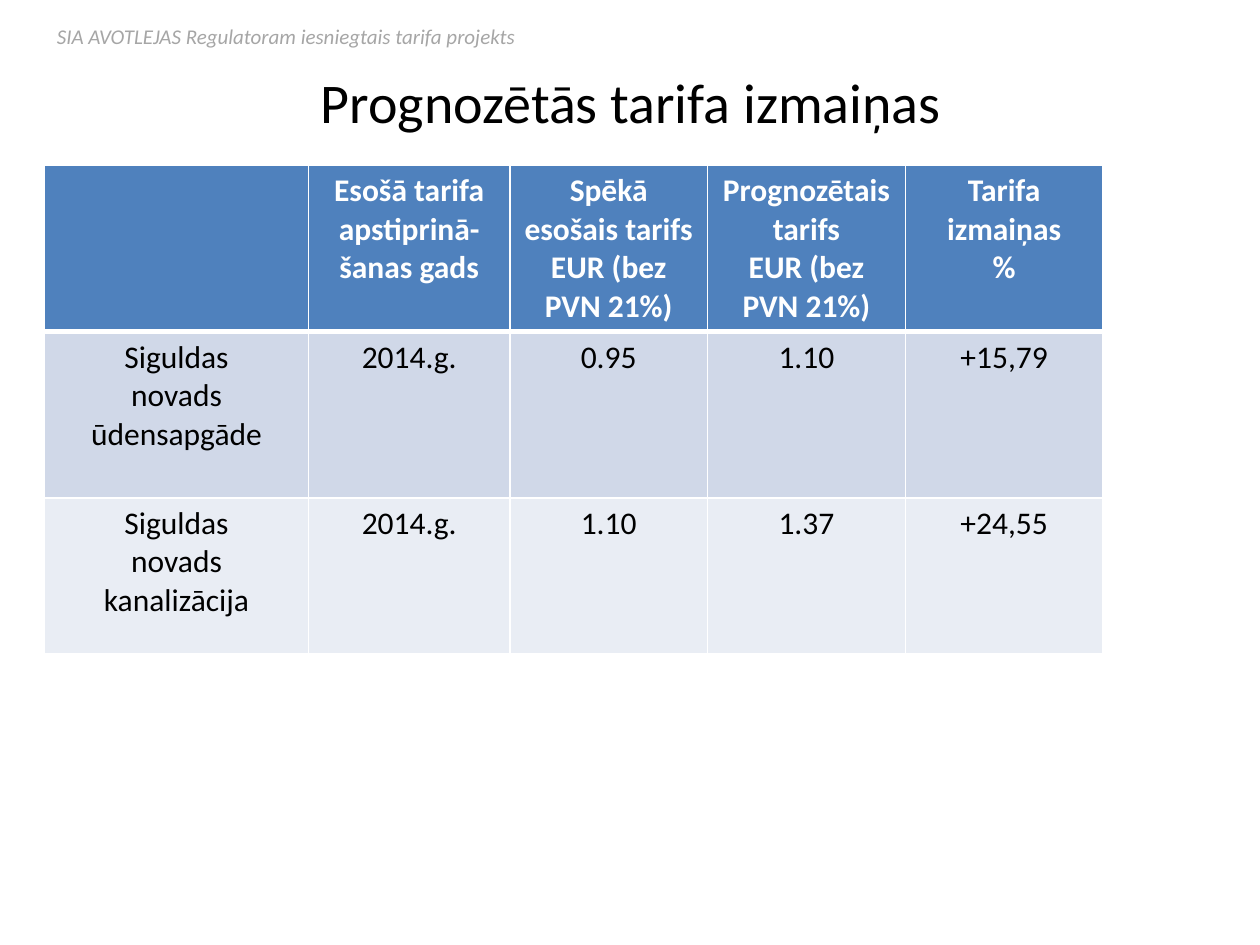
from lxml import etree
from pptx import Presentation
from pptx.dml.color import RGBColor
from pptx.enum import text
from pptx.oxml import ns
from pptx.util import Pt

# Content
TITLE = "Prognozētās tarifa izmaiņas"
CAPTION = "SIA AVOTLEJAS Regulatoram iesniegtais tarifa projekts"
ROWS = [
    ["", "Esošā tarifa apstiprinā-šanas gads",
     "Spēkā esošais tarifs\nEUR (bez PVN 21%)",
     "Prognozētais tarifs\nEUR (bez PVN 21%)", "Tarifa izmaiņas\n%"],
    ["Siguldas\nnovads\nūdensapgāde", "2014.g.", "0.95", "1.10", "+15,79"],
    ["Siguldas\nnovads\nkanalizācija", "2014.g.", "1.10", "1.37", "+24,55"],
]

# Style
FONT = "Calibri"
BLACK = RGBColor(0x00, 0x00, 0x00)
WHITE = RGBColor(0xFF, 0xFF, 0xFF)
GREY = RGBColor(0xA6, 0xA6, 0xA6)
ROW_FILLS = [RGBColor(0x4F, 0x81, 0xBD), RGBColor(0xD0, 0xD8, 0xE8),
             RGBColor(0xE9, 0xED, 0xF4)]
COL_WIDTHS = [151, 115, 113, 113, 113]
ROW_HEIGHTS = [95, 95, 89]
LEFT = 25.4


def set_font(p, size, color, bold=False, italic=False):
    f = p.font
    f.name, f.size, f.bold, f.italic = FONT, Pt(size), bold, italic
    f.color.rgb = color


def set_border(cell, side, width):
    tc_pr = cell._tc.get_or_add_tcPr()
    ln = etree.SubElement(tc_pr, ns.qn("a:ln" + side), w=str(Pt(width)))
    fill = etree.SubElement(ln, ns.qn("a:solidFill"))
    etree.SubElement(fill, ns.qn("a:srgbClr"), val=str(WHITE))


prs = Presentation()
prs.slide_width, prs.slide_height = Pt(720), Pt(540)
s = prs.slides.add_slide(prs.slide_layouts[5])

# Title
title = s.shapes.title
title.left, title.top, title.width, title.height = Pt(36.7), Pt(26), Pt(648), Pt(64)
title.text_frame.text = TITLE
title.text_frame.vertical_anchor = text.MSO_ANCHOR.MIDDLE
p = title.text_frame.paragraphs[0]
p.alignment = text.PP_ALIGN.CENTER
set_font(p, 32, BLACK)

# Tariff table
table = s.shapes.add_table(len(ROWS), len(COL_WIDTHS), Pt(LEFT), Pt(94.5),
                           Pt(sum(COL_WIDTHS)), Pt(sum(ROW_HEIGHTS))).table
for col, width in zip(table.columns, COL_WIDTHS):
    col.width = Pt(width)
for r, (row, height) in enumerate(zip(ROWS, ROW_HEIGHTS)):
    table.rows[r].height = Pt(height)
    header = r == 0
    borders = {"L": 1, "R": 1, "T": 3 if r == 1 else 1, "B": 3 if header else 1}
    for c, value in enumerate(row):
        cell = table.cell(r, c)
        for side, width in borders.items():
            set_border(cell, side, width)
        cell.fill.solid()
        cell.fill.fore_color.rgb = ROW_FILLS[r]
        cell.text_frame.text = value
        for p in cell.text_frame.paragraphs:
            p.alignment = text.PP_ALIGN.CENTER
            set_font(p, 18, WHITE if header else BLACK, bold=header)

# Caption
tf = s.shapes.add_textbox(Pt(LEFT), Pt(10), Pt(504), Pt(22)).text_frame
tf.word_wrap = True
tf.text = CAPTION
set_font(tf.paragraphs[0], 12, GREY, italic=True)

prs.save("out.pptx")
